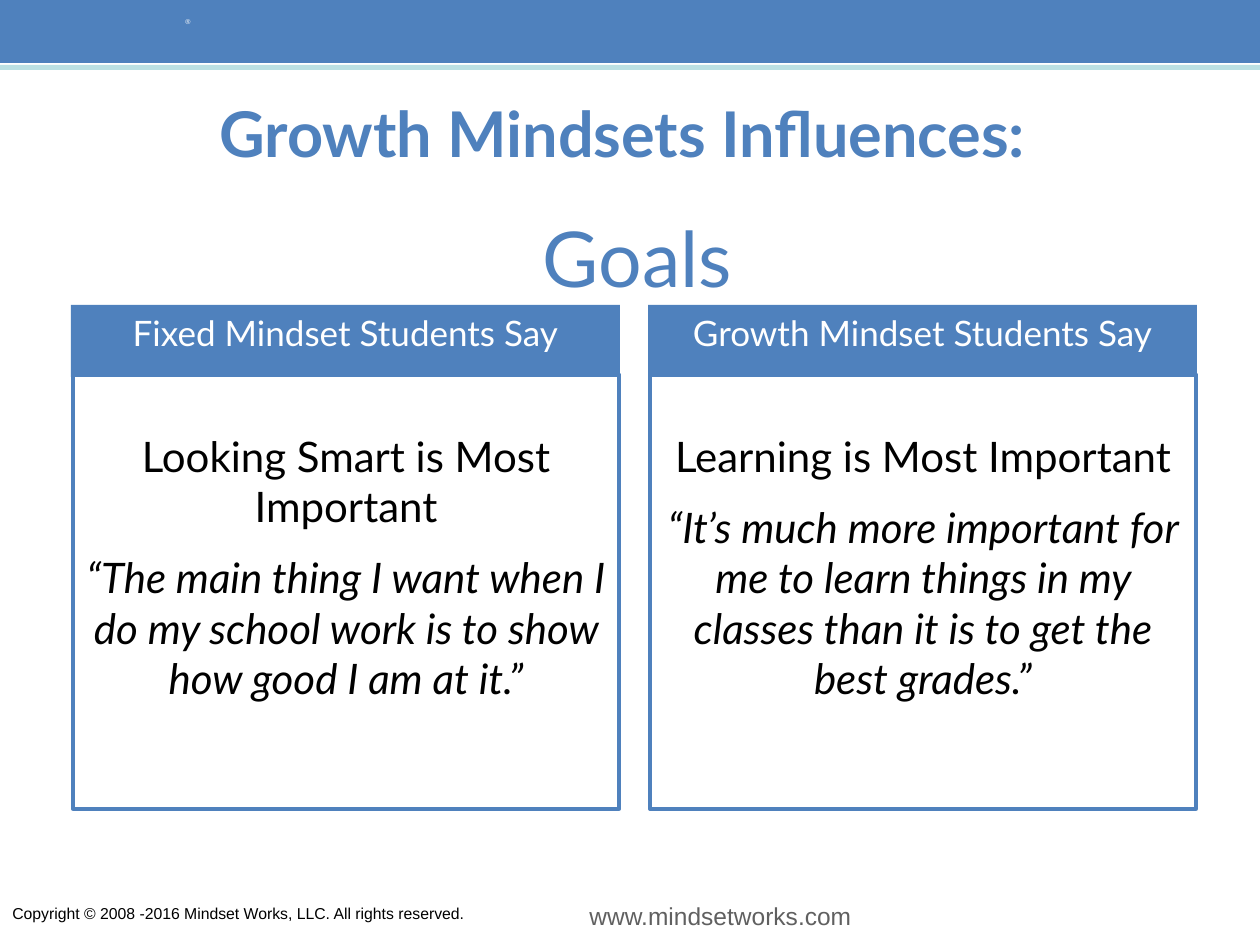
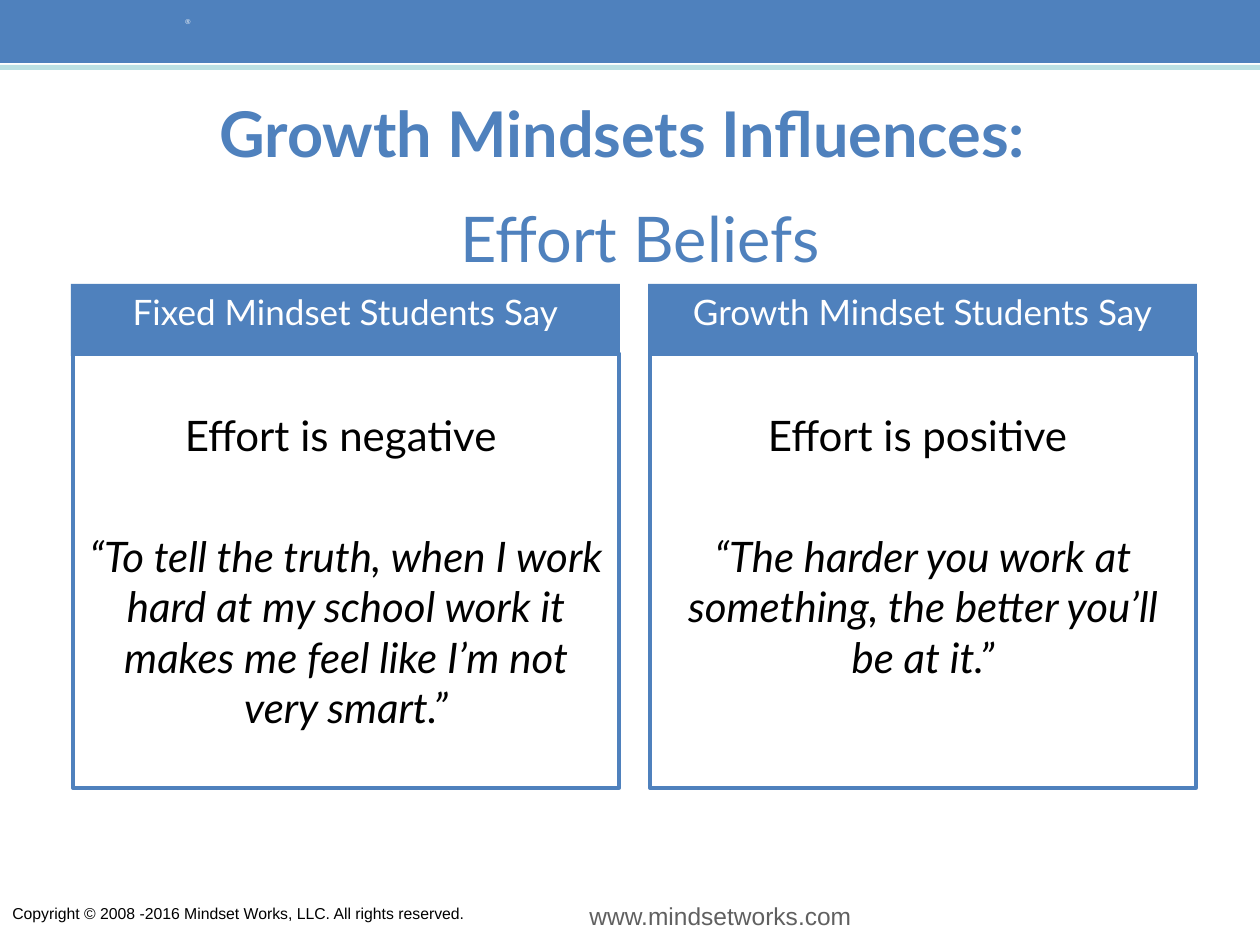
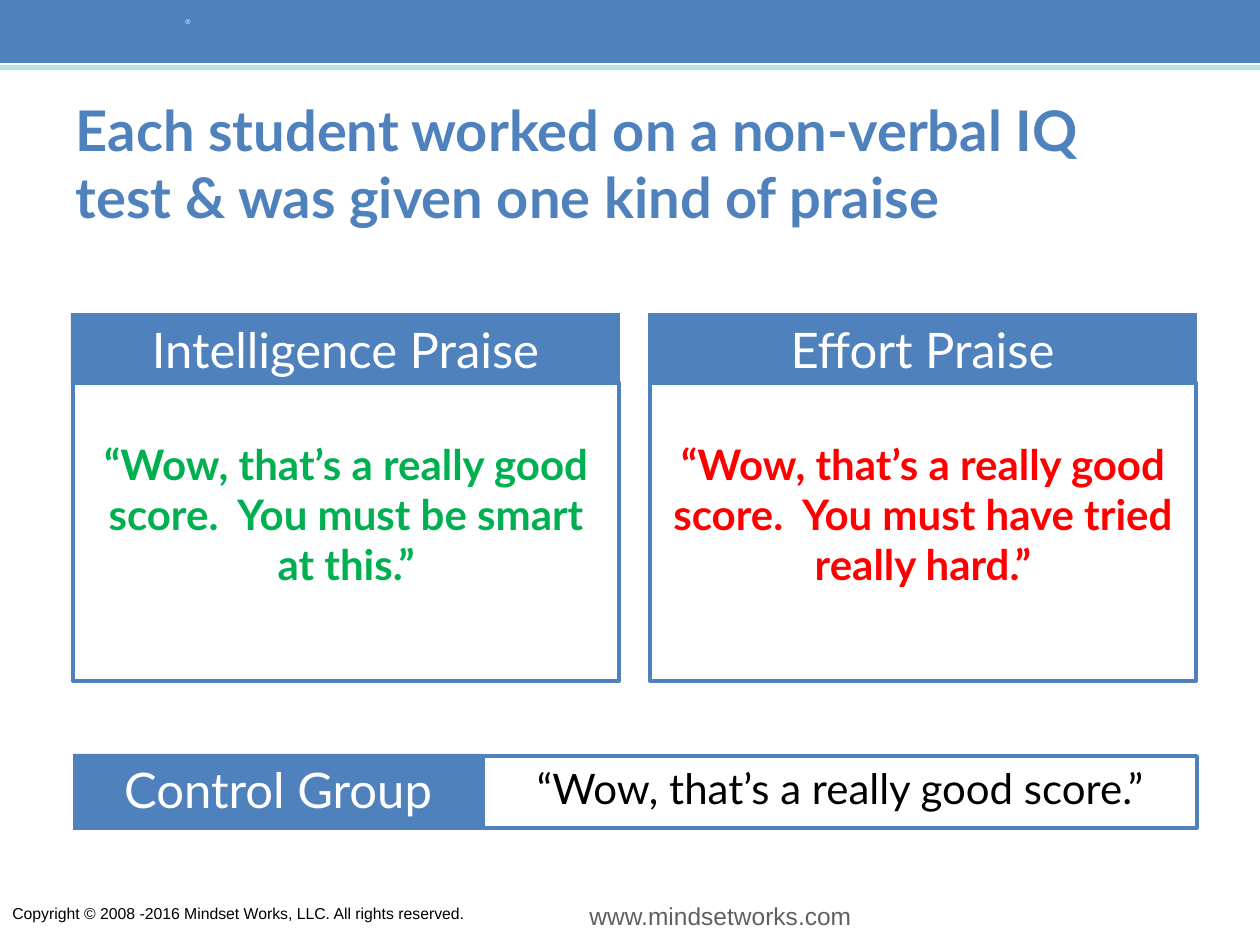
"""Build three slides on mindset beliefs and kinds of praise."""
from dataclasses import dataclass

from pptx import Presentation
from pptx.dml.color import RGBColor
from pptx.enum.shapes import MSO_SHAPE
from pptx.enum.text import MSO_ANCHOR, MSO_AUTO_SIZE, PP_ALIGN
from pptx.util import Emu, Pt

RECTANGLE = MSO_SHAPE.RECTANGLE
TOP, MIDDLE = MSO_ANCHOR.TOP, MSO_ANCHOR.MIDDLE
LEFT, CENTER = PP_ALIGN.LEFT, PP_ALIGN.CENTER
NO_AUTOFIT = MSO_AUTO_SIZE.NONE

PX_PER_INCH = 126
PAGE_WIDTH, PAGE_HEIGHT = 1260, 945
BLUE, PALE, WHITE, BLACK = "4F81BD", "BBE0E3", "FFFFFF", "000000"
GRAY, NAVY, GREEN, RED = "606060", "000099", "00B050", "FF0000"
HEADING_FONT, FOOTER_FONT = "Lato", "Arial"

INSET = 6
BODY_INSET = 56
COLUMN_STEP = 577
HEADER_LEFT, HEADER_WIDTH, HEADER_HEIGHT = 71, 549, 72
BODY_LEFT, BODY_WIDTH, BODY_DROP = 73, 546, 69


@dataclass(frozen=True)
class Span:
    """A run of text in one style."""
    text: str
    size: int
    color: str
    bold: bool = False
    italic: bool = False
    font: str = HEADING_FONT


@dataclass(frozen=True)
class Para:
    """A paragraph with its alignment and the space before it."""
    spans: tuple[Span, ...]
    align: PP_ALIGN = CENTER
    before: float = 0


@dataclass(frozen=True)
class Box:
    """A rectangle or plain text area, in px."""
    left: int
    top: int
    width: int
    height: int
    paras: tuple[Para, ...] = ()
    fill: str | None = None
    line: str | None = None
    anchor: MSO_ANCHOR = TOP
    inset: int = INSET


@dataclass(frozen=True)
class Column:
    """A heading with the paragraphs shown beneath it."""
    heading: Span
    paras: tuple[Para, ...]


@dataclass(frozen=True)
class Page:
    """The content of one slide."""
    title: Para
    title_top: int
    columns: tuple[Column, ...]
    columns_top: int
    body_height: int
    extras: tuple[Box, ...]


def px(length: int) -> Emu:
    """Turn px into EMU."""
    return Emu(round(length * 914400 / PX_PER_INCH))


def rgb(color: str) -> RGBColor:
    """Turn a hex string into a colour."""
    return RGBColor.from_string(color)


def write(frame, paras: tuple[Para, ...], anchor: MSO_ANCHOR, inset: int = INSET) -> None:
    """Fill a text frame run by run."""
    frame.word_wrap = True
    frame.auto_size = NO_AUTOFIT
    frame.vertical_anchor = anchor
    frame.margin_top = px(inset)
    for index, para in enumerate(paras):
        paragraph = frame.add_paragraph() if index else frame.paragraphs[0]
        paragraph.alignment = para.align
        paragraph.space_before = Pt(para.before)
        for span in para.spans:
            run = paragraph.add_run()
            run.text = span.text
            run.font.name = span.font
            run.font.size = Pt(span.size)
            run.font.bold = span.bold
            run.font.italic = span.italic
            run.font.color.rgb = rgb(span.color)


def draw_box(slide, box: Box) -> None:
    """Draw a box as a rectangle, or as a text box if it has no fill or line."""
    place = [px(length) for length in (box.left, box.top, box.width, box.height)]
    if box.fill or box.line:
        shape = slide.shapes.add_shape(RECTANGLE, *place)
        shape.shadow.inherit = False
        if box.fill:
            shape.fill.solid()
            shape.fill.fore_color.rgb = rgb(box.fill)
        else:
            shape.fill.background()
        if box.line:
            shape.line.color.rgb = rgb(box.line)
            shape.line.width = Pt(2)
        else:
            shape.line.fill.background()
    else:
        shape = slide.shapes.add_textbox(*place)
    if box.paras:
        write(shape.text_frame, box.paras, box.anchor, box.inset)


def footer(text: str, size: int, color: str) -> tuple[Para, ...]:
    """Return a left-aligned line in the footer font."""
    return (Para((Span(text, size, color, font=FOOTER_FONT),), LEFT),)


def heading_box(left: int, top: int, width: int, height: int, heading: Span) -> Box:
    """Return a blue heading bar."""
    return Box(left, top, width, height, (Para((heading,)),), fill=BLUE)


def title(text: str, size: int, align: PP_ALIGN) -> Para:
    """Return a bold blue title."""
    return Para((Span(text, size, BLUE, bold=True),), align)


def belief_columns(fixed: tuple[str, str], growth: tuple[str, str], gap: float) -> tuple[Column, ...]:
    """Return the fixed and growth columns, each with a belief and a quote."""
    return tuple(
        Column(
            Span(f"{mindset} Mindset Students Say", 20, WHITE),
            (
                Para((Span(belief, 24, BLACK),)),
                Para((Span(quote, 24, BLACK, italic=True),), before=gap),
            ),
        )
        for mindset, (belief, quote) in (("Fixed", fixed), ("Growth", growth))
    )


def praise_column(kind: str, quote: str, color: str) -> Column:
    """Return a column with one bold quote."""
    return Column(Span(kind, 28, WHITE), (Para((Span(quote, 24, color, bold=True),)),))


FRAME = (
    Box(577, 895, 294, 43, footer("www.mindsetworks.com", 14, GRAY)),
    Box(0, 0, PAGE_WIDTH, 63, fill=BLUE),
    Box(0, 65, PAGE_WIDTH, 5, fill=PALE),
    Box(0, 898, 514, 32, footer(
        "Copyright © 2008 -2016 Mindset Works, LLC. All rights reserved.", 9, BLACK)),
    Box(173, 11, 32, 21, footer("®", 4, WHITE)),
)

INFLUENCES = title("Growth Mindsets Influences: ", 36, CENTER)

PAGES = (
    Page(
        INFLUENCES, 53,
        belief_columns(
            ("Looking Smart is Most Important",
             "“The main thing I want when I do my school work is to show how good I am at it.”"),
            ("Learning is Most Important",
             "“It’s much more important for me to learn things in my classes than it is "
             "to get the best grades.”"),
            12,
        ),
        305, 435,
        (Box(63, 204, 1134, 105,
             (Para((Span(" ", 36, NAVY, bold=True), Span("Goals", 44, BLUE))),),
             anchor=MIDDLE),),
    ),
    Page(
        INFLUENCES, 53,
        belief_columns(
            ("Effort is negative ",
             "“To tell the truth, when I work hard at my school work it makes me feel "
             "like I’m not very smart.”"),
            ("Effort is positive ",
             "“The harder you work at something, the better you’ll be at it.”"),
            40.5,
        ),
        284, 435,
        (Box(73, 158, 1134, 158, (Para((Span("Effort Beliefs", 36, BLUE),)),), anchor=MIDDLE),),
    ),
    Page(
        title("Each student worked on a non-verbal IQ test & was given one kind of praise", 32, LEFT),
        84,
        (
            praise_column("Intelligence Praise",
                          "“Wow, that’s a really good score.  You must be smart at this.”", GREEN),
            praise_column("Effort Praise",
                          "“Wow, that’s a really good score.  You must have tried really hard.”", RED),
        ),
        313, 299,
        (
            heading_box(73, 754, 410, 76, Span("Control Group", 28, WHITE)),
            Box(483, 756, 714, 72,
                (Para((Span("“Wow, that’s a really good score.”", 24, BLACK),)),), line=BLUE),
        ),
    ),
)


def draw_page(deck, page: Page) -> None:
    """Add one slide with its frame, title, columns and extra boxes."""
    slide = deck.slides.add_slide(deck.slide_layouts[5])
    for box in FRAME:
        draw_box(slide, box)
    heading = slide.shapes.title
    heading.left, heading.top = px(63), px(page.title_top)
    heading.width, heading.height = px(1134), px(158)
    write(heading.text_frame, (page.title,), MIDDLE)
    for index, column in enumerate(page.columns):
        shift = index * COLUMN_STEP
        draw_box(slide, Box(BODY_LEFT + shift, page.columns_top + BODY_DROP, BODY_WIDTH,
                            page.body_height, column.paras, line=BLUE, inset=BODY_INSET))
        draw_box(slide, heading_box(HEADER_LEFT + shift, page.columns_top, HEADER_WIDTH,
                                    HEADER_HEIGHT, column.heading))
    for box in page.extras:
        draw_box(slide, box)


def main() -> None:
    """Build and save the deck."""
    deck = Presentation()
    deck.slide_width, deck.slide_height = px(PAGE_WIDTH), px(PAGE_HEIGHT)
    for page in PAGES:
        draw_page(deck, page)
    deck.save("out.pptx")


if __name__ == "__main__":
    main()
